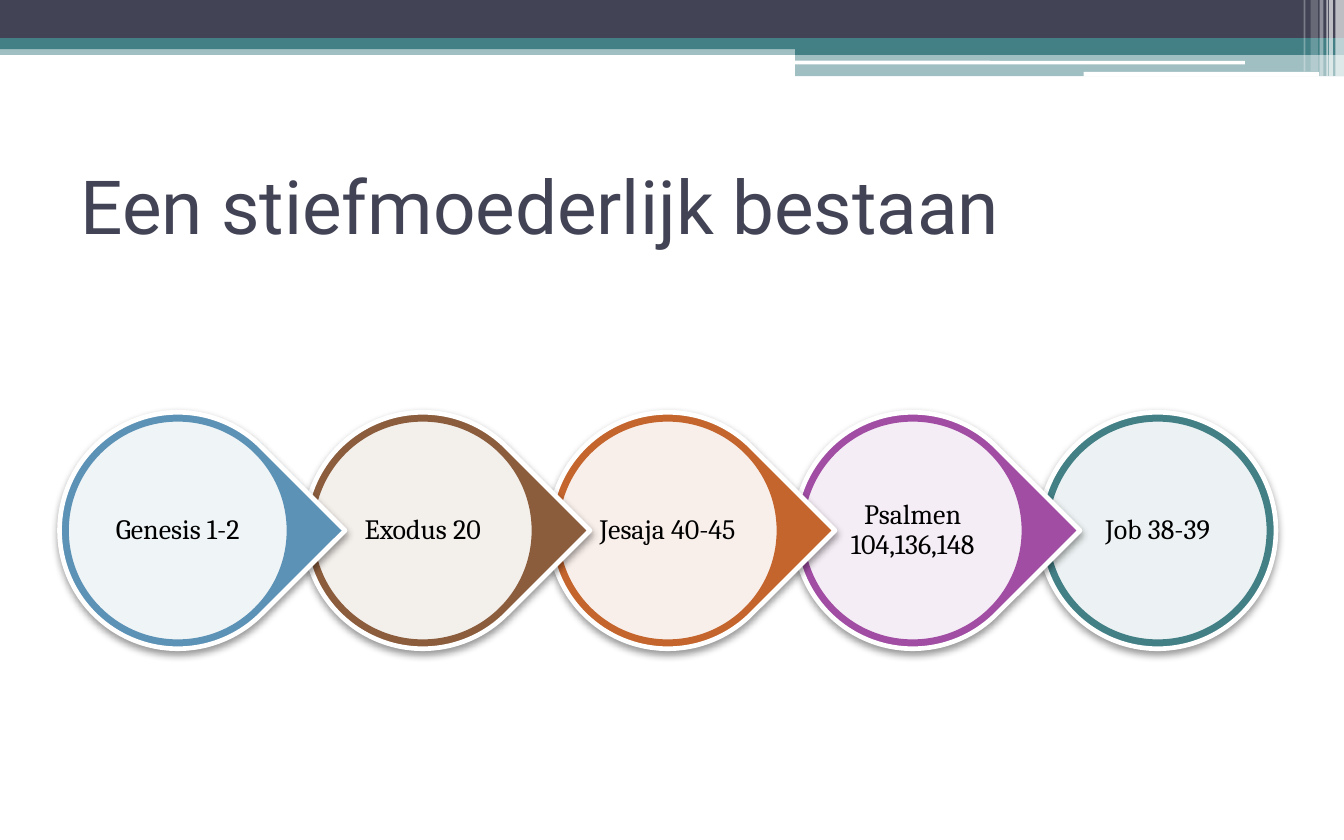
"""Build the slide 'Een stiefmoederlijk bestaan' with a chain of five Bible passages."""
from lxml import etree
from pptx import Presentation
from pptx import util as u
from pptx.dml.color import RGBColor
from pptx.enum import shapes, text
from pptx.oxml import ns

INK, TEAL, WHITE, BLACK = "424456", "438086", "FFFFFF", "000000"


def paint(fill, color, opacity=100):
    fill.solid()
    fill.fore_color.rgb = RGBColor.from_string(color)
    if opacity < 100:
        tone = fill._xPr.find(ns.qn("a:solidFill"))[0]
        etree.SubElement(tone, ns.qn("a:alpha"), val=str(opacity * 1000))


def write(words, box, frame_format, paragraph_format, font_format, color):
    frame = slide.shapes.add_textbox(*map(u.Cm, box)).text_frame
    paragraph = frame.paragraphs[0]
    run = paragraph.add_run()
    run.text = words
    for target, values in ((frame, frame_format), (paragraph, paragraph_format), (run.font, font_format)):
        for name, value in values.items():
            setattr(target, name, value)
    paint(run.font.fill, color)


deck = Presentation()
deck.slide_width, deck.slide_height = u.Cm(25.4), u.Cm(15.88)
slide = deck.slides.add_slide(deck.slide_layouts[6])
forms = shapes.MSO_SHAPE

banner = [
    (forms.RECTANGLE, 0, 0.84, 25.4, 0.2, TEAL, 50),
    (forms.RECTANGLE, 0, 0, 25.4, 0.72, INK, 100),
    (forms.RECTANGLE, 0, 0.72, 25.4, 0.21, TEAL, 100),
    (forms.RECTANGLE, 15.03, 0.83, 10.37, 0.21, TEAL, 100),
    (forms.RECTANGLE, 15.03, 1.03, 10.37, 0.41, TEAL, 50),
    (forms.ROUNDED_RECTANGLE, 15.01, 1.15, 8.52, 0.07, WHITE, 100),
    (forms.ROUNDED_RECTANGLE, 20.48, 1.36, 4.45, 0.09, WHITE, 100),
    (forms.RECTANGLE, 25.24, 0, 0.16, 1.44, WHITE, 65),
    (forms.RECTANGLE, 25.12, 0, 0.07, 1.44, WHITE, 65),
    (forms.RECTANGLE, 25.07, 0, 0.03, 1.44, WHITE, 60),
    (forms.RECTANGLE, 24.94, 0, 0.07, 1.44, WHITE, 40),
    (forms.RECTANGLE, 24.77, 0, 0.14, 1.35, WHITE, 20),
    (forms.RECTANGLE, 24.64, 0, 0.03, 1.35, WHITE, 30),
]
for form, left, top, width, height, color, opacity in banner:
    stripe = slide.shapes.add_shape(form, *map(u.Cm, (left, top, width, height)))
    stripe.shadow.inherit = False
    stripe.line.fill.background()
    paint(stripe.fill, color, opacity)

middle = text.MSO_ANCHOR.MIDDLE
write("Een stiefmoederlijk bestaan", (1.27, 2.64, 22.86, 2.46),
      {"word_wrap": True, "vertical_anchor": middle}, {},
      {"size": u.Pt(40), "name": "Roboto"}, INK)

passage_frame = {"word_wrap": True, "vertical_anchor": middle}
passage_frame |= {f"margin_{side}": u.Cm(0.05) for side in ("left", "top", "right", "bottom")}
passage_paragraph = {"alignment": text.PP_ALIGN.CENTER, "line_spacing": 0.9}
passage_font = {"size": u.Pt(15), "name": "Cambria"}

passages = [
    ("Genesis 1-2", "5C92B5"),
    ("Exodus 20", "8B5D3D"),
    ("Jesaja 40-45", "C4652D"),
    ("Psalmen 104,136,148", "A04DA3"),
    ("Job 38-39", TEAL),
]
first_center, pitch, center_y = 3.36, 4.63, 10.03
drop_size, disc_size, words_size = 4.47, 4.17, 2.97

for index, (words, color) in reversed(list(enumerate(passages))):
    center_x = first_center + index * pitch
    drop_box, disc_box, words_box = [
        (center_x - size / 2, center_y - size / 2, size, size)
        for size in (drop_size, disc_size, words_size)]
    is_last = index == len(passages) - 1
    drop_form = forms.OVAL if is_last else forms.TEAR
    for form, box, fill, opacity, edge, weight in (
            (drop_form, drop_box, color, 100, WHITE, 2.5),
            (forms.OVAL, disc_box, WHITE, 90, color, 1.5)):
        link = slide.shapes.add_shape(form, *map(u.Cm, box))
        link.shadow.inherit = False
        paint(link.fill, fill, opacity)
        paint(link.line.fill, edge)
        link.line.width = u.Pt(weight)
        if box is drop_box:
            link.rotation = 0 if is_last else 45
            effects = link._element.spPr.find(ns.qn("a:effectLst"))
            shade = etree.SubElement(effects, ns.qn("a:outerShdw"), blurRad=str(u.Pt(4.1)),
                                     dist=str(u.Pt(2)), dir="5400000", rotWithShape="0")
            tone = etree.SubElement(shade, ns.qn("a:srgbClr"), val=BLACK)
            etree.SubElement(tone, ns.qn("a:alpha"), val="40000")
    write(words, words_box, passage_frame, passage_paragraph, passage_font, BLACK)

deck.save("out.pptx")
